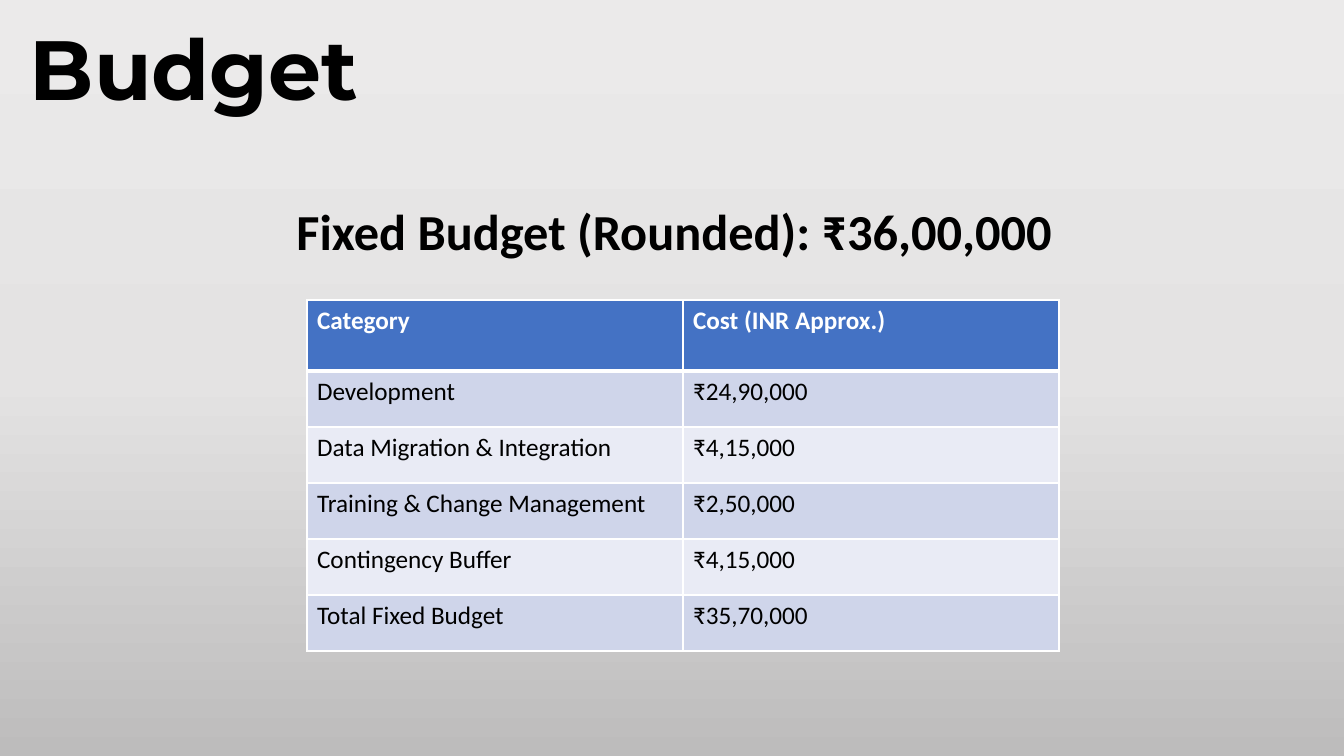
from copy import deepcopy
from dataclasses import dataclass

from lxml.etree import SubElement
from pptx import Presentation
from pptx.dml.color import RGBColor
from pptx.enum.text import MSO_ANCHOR, MSO_AUTO_SIZE, PP_ALIGN
from pptx.oxml.ns import qn
from pptx.util import Pt

EMU_PER_PX = 914400 / 100.8


@dataclass(frozen=True)
class Theme:
    ink: str = "000000"
    white: str = "FFFFFF"
    header: str = "4472C4"
    bands: tuple = ("CFD5EA", "E9EBF5")
    backdrop: tuple = ((0, "EBEAEA"), (0.5, "E4E3E3"), (1, "BDBCBC"))
    heading_font: str = "Montserrat"
    body_font: str = "Calibri"
    title_size: int = 60
    summary_size: int = 36
    table_size: int = 18
    rule: int = 1
    header_rule: int = 3


THEME = Theme()

BUDGET = (
    ("Category", "Cost (INR Approx.)"),
    ("Development", "₹24,90,000"),
    ("Data Migration & Integration", "₹4,15,000"),
    ("Training & Change Management", "₹2,50,000"),
    ("Contingency Buffer", "₹4,15,000"),
    ("Total Fixed Budget", "₹35,70,000"),
)


def px(length):
    return round(length * EMU_PER_PX)


def set_all(target, values):
    for name, value in values.items():
        setattr(target, name, value)


def place(box, left, top, width, height):
    set_all(box, {"left": px(left), "top": px(top),
                  "width": px(width), "height": px(height)})


def write(frame, text, font, size, color, bold, align=PP_ALIGN.LEFT):
    para = frame.paragraphs[0]
    para.alignment = align
    span = para.add_run()
    span.text = text
    set_all(span.font, {"name": font, "size": Pt(size), "bold": bold})
    span.font.color.rgb = RGBColor.from_string(color)
    return para


def paint_background(page):
    fill = page.background.fill
    fill.gradient()
    fill.gradient_angle = 270
    # A new gradient has two stops; the middle one is added
    stops = page.element.find(".//" + qn("a:gsLst"))
    stops.append(deepcopy(stops[0]))
    for stop, (position, color) in zip(fill.gradient_stops, THEME.backdrop):
        stop.position = position
        stop.color.rgb = RGBColor.from_string(color)


def add_title(page, text):
    title = page.shapes.title
    place(title, 0, 0, 388, 124)
    set_all(title.text_frame, {"word_wrap": True, "auto_size": MSO_AUTO_SIZE.NONE,
                               "vertical_anchor": MSO_ANCHOR.BOTTOM})
    para = write(title.text_frame, text, THEME.heading_font, THEME.title_size,
                 THEME.ink, True, PP_ALIGN.CENTER)
    para.line_spacing = 0.9


def add_summary(page, text):
    box = page.shapes.add_textbox(0, 0, 0, 0)
    place(box, 33, 200, 1283, 62)
    set_all(box.text_frame, {"word_wrap": True, "margin_top": 0, "margin_bottom": 0})
    write(box.text_frame, text, THEME.body_font, THEME.summary_size,
          THEME.ink, True, PP_ALIGN.CENTER)


def add_borders(cell, widths):
    properties = cell._tc.get_or_add_tcPr()
    for side, width in widths.items():
        line = SubElement(properties, qn("a:ln" + side), w=str(Pt(width)))
        fill = SubElement(line, qn("a:solidFill"))
        SubElement(fill, qn("a:srgbClr"), val=THEME.white)


def format_cell(cell, text, row):
    is_header = row == 0
    rule, thick = THEME.rule, THEME.header_rule
    add_borders(cell, {"L": rule, "R": rule,
                       "T": thick if row == 1 else rule,
                       "B": thick if is_header else rule})
    cell.fill.solid()
    cell.fill.fore_color.rgb = RGBColor.from_string(
        THEME.header if is_header else THEME.bands[(row - 1) % 2])
    write(cell.text_frame, text, THEME.body_font, THEME.table_size,
          THEME.white if is_header else THEME.ink, is_header)


def add_budget_table(page, rows):
    header_height, row_height, column_width = 71, 56, 376
    height = header_height + row_height * (len(rows) - 1)
    table = page.shapes.add_table(len(rows), 2, px(307), px(300),
                                  px(2 * column_width), px(height)).table
    for column in table.columns:
        column.width = px(column_width)
    for index, values in enumerate(rows):
        table.rows[index].height = px(row_height if index else header_height)
        for column, text in enumerate(values):
            format_cell(table.cell(index, column), text, index)


def main():
    deck = Presentation()
    set_all(deck, {"slide_width": px(1344), "slide_height": px(756)})
    page = deck.slides.add_slide(deck.slide_layouts[5])

    # Backdrop and headings
    paint_background(page)
    add_title(page, "Budget")
    add_summary(page, "Fixed Budget (Rounded): ₹36,00,000")

    # Cost breakdown
    add_budget_table(page, BUDGET)
    deck.save("out.pptx")


if __name__ == "__main__":
    main()
